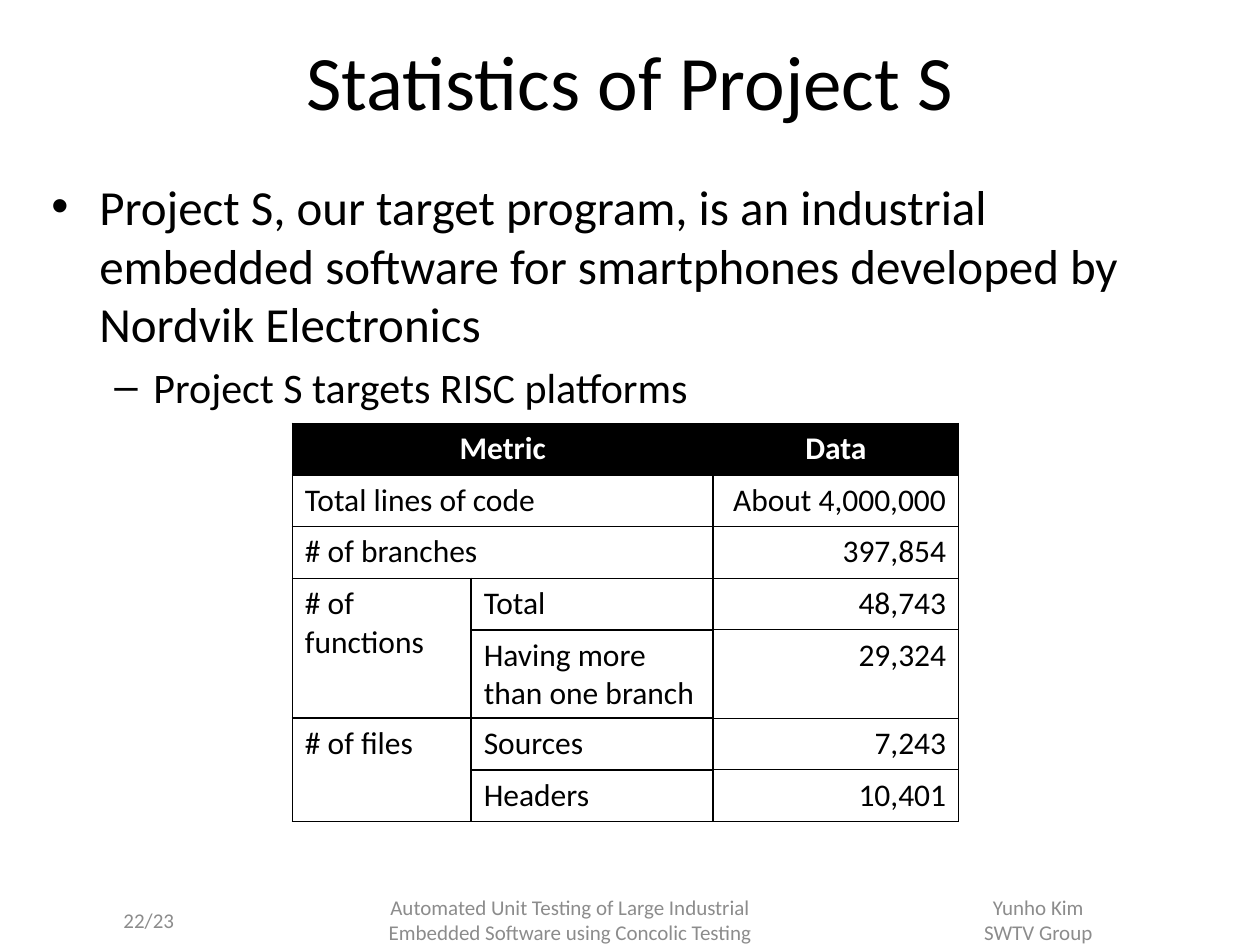
from pptx import Presentation
from pptx.dml.color import RGBColor
from pptx.enum.text import MSO_ANCHOR as Anchor, PP_ALIGN as Align
from pptx.oxml.ns import qn
from pptx.util import Inches, Pt
from lxml.etree import Element, SubElement

BLACK, WHITE, GREY = "000000", "FFFFFF", "8C8C8C"
THIN, REGULAR = 0.75, 1


def color(value):
    return RGBColor.from_string(value)


class SlideBuilder:
    """Hold the style and the current slide, and add each kind of element."""

    font = "Calibri"

    def __init__(self, slide):
        self.slide = slide

    def add_text_run(self, paragraph, text, size, ink=BLACK, bold=False, align=Align.LEFT):
        paragraph.alignment = align
        run = paragraph.add_run()
        run.text = text
        run.font.name = self.font
        run.font.size = Pt(size)
        run.font.bold = bold
        run.font.color.rgb = color(ink)

    def frame(self, box, anchor):
        shape = self.slide.shapes.add_textbox(*map(Inches, box))
        frame = shape.text_frame
        frame.word_wrap = True
        frame.vertical_anchor = anchor
        return frame

    def paragraphs(self, frame, count):
        return [frame.paragraphs[0]] + [frame.add_paragraph() for _ in range(count - 1)]

    def text(self, box, lines, size, ink=BLACK, align=Align.CENTER):
        frame = self.frame(box, Anchor.MIDDLE)
        for paragraph, line in zip(self.paragraphs(frame, len(lines)), lines):
            self.add_text_run(paragraph, line, size, ink, align=align)

    def bullets(self, box, items):
        frame = self.frame(box, Anchor.TOP)
        for paragraph, item in zip(self.paragraphs(frame, len(items)), items):
            level, bullet, left, hanging, before, size, text = item
            paragraph.level = level
            properties = paragraph._p.get_or_add_pPr()
            properties.set("marL", str(Inches(left)))
            properties.set("indent", str(-Inches(hanging)))
            SubElement(properties, qn("a:buFont"), typeface="Arial")
            SubElement(properties, qn("a:buChar"), char=bullet)
            paragraph.space_before = Pt(before)
            self.add_text_run(paragraph, text, size)

    def borders(self, cell, widths):
        properties = cell._tc.get_or_add_tcPr()
        for index, (side, width) in enumerate(zip("LRTB", widths)):
            line = Element(qn(f"a:ln{side}"), w=str(Pt(width)))
            fill = SubElement(line, qn("a:solidFill"))
            SubElement(fill, qn("a:srgbClr"), val=BLACK)
            properties.insert(index, line)

    def table(self, box, widths, heights, rows, merges, size):
        shape = self.slide.shapes.add_table(len(rows), len(widths), *map(Inches, box))
        table = shape.table
        for column, width in zip(table.columns, widths):
            column.width = Inches(width)
        for row, height in zip(table.rows, heights):
            row.height = Inches(height)
        last = len(widths) - 1
        for r, row in enumerate(rows):
            for c, text in enumerate(row):
                cell = table.cell(r, c)
                header = r == 0
                cell.fill.solid()
                cell.fill.fore_color.rgb = color(BLACK if header else WHITE)
                outer = THIN if c == last else REGULAR
                self.borders(cell, (REGULAR, outer, outer, outer))
                if text:
                    align = Align.CENTER if header else Align.RIGHT if c == last else Align.LEFT
                    ink = WHITE if header else BLACK
                    paragraph = cell.text_frame.paragraphs[0]
                    self.add_text_run(paragraph, text, size, ink, header, align)
        for first, final in merges:
            table.cell(*first).merge(table.cell(*final))


def main():
    presentation = Presentation()
    presentation.slide_width = Inches(10)
    presentation.slide_height = Inches(7.5)
    builder = SlideBuilder(presentation.slides.add_slide(presentation.slide_layouts[6]))

    builder.text((0, 0.16, 10, 0.94), ["Statistics of Project S"], 44)
    builder.bullets((0.31, 1.35, 9.22, 5.7), [
        (0, "•", 0.38, 0.38, 0, 28,
         "Project S, our target program, is an industrial embedded software "
         "for smartphones developed by Nordvik Electronics"),
        (1, "–", 0.81, 0.31, 4.8, 24, "Project S targets RISC platforms"),
    ])

    rows = [
        ("Metric", "", "Data"),
        ("Total lines of code", "", "About 4,000,000"),
        ("# of branches", "", "397,854"),
        ("# of functions", "Total", "48,743"),
        ("", "Having more than one branch", "29,324"),
        ("# of files", "Sources", "7,243"),
        ("", "Headers", "10,401"),
    ]
    heights = [0.7 if "branch" in row[1] else 0.41 for row in rows]
    merges = [((r, 0), (r, 1)) for r in range(3)] + [((r, 0), (r + 1, 0)) for r in (3, 5)]
    builder.table((2.32, 3.36, 5.29, sum(heights)), (1.42, 1.92, 1.95), heights, rows, merges, 18)

    footers = [
        (0.5, 0.98, Align.RIGHT, ["22/23"]),
        (1.69, 5.67, Align.CENTER, ["Automated Unit Testing of Large Industrial",
                                    "Embedded Software using Concolic Testing"]),
        (7.5, 1.48, Align.CENTER, ["Yunho Kim", "SWTV Group"]),
    ]
    for left, width, align, lines in footers:
        builder.text((left, 7.1, width, 0.4), lines, 12, GREY, align)

    presentation.save("out.pptx")


if __name__ == "__main__":
    main()
